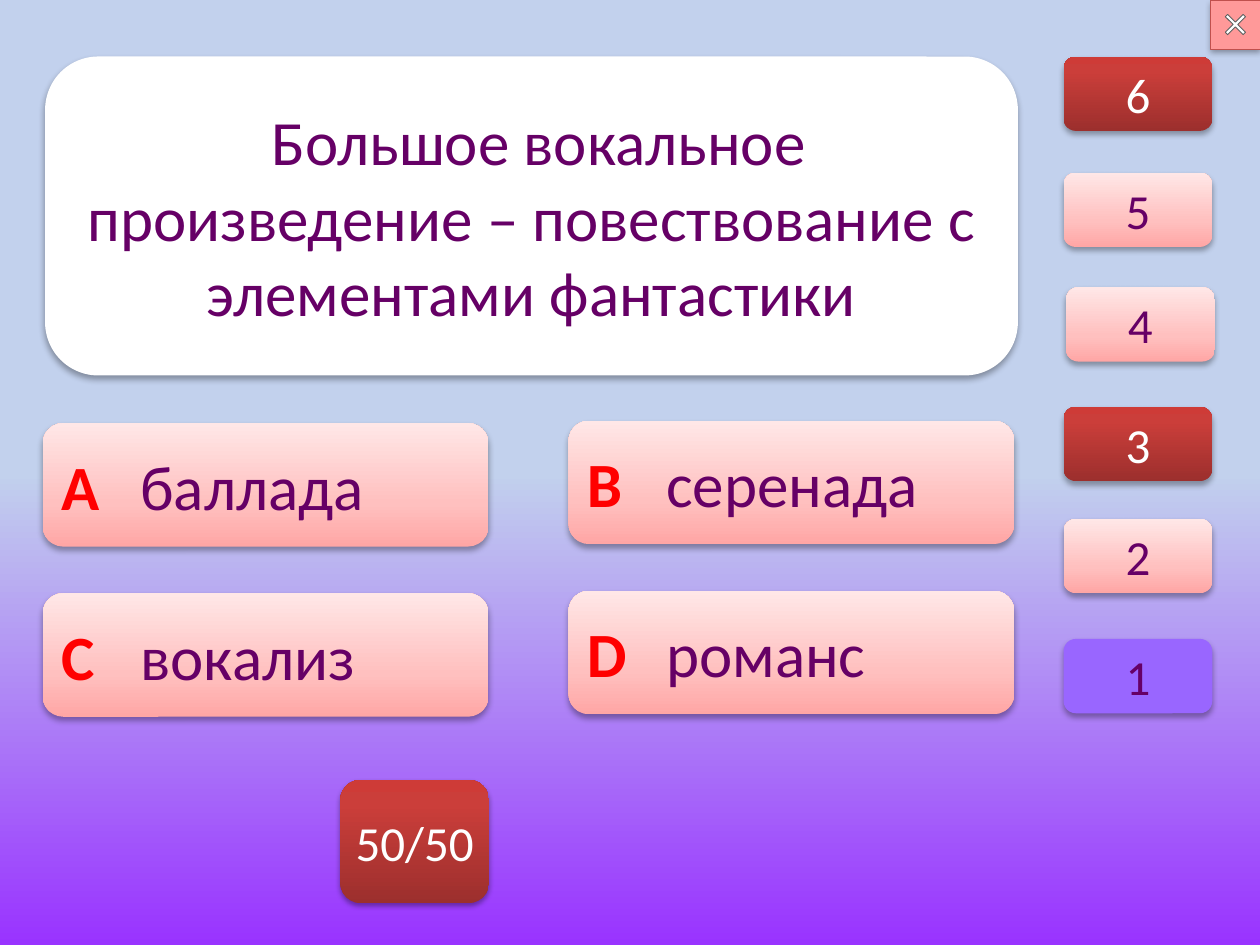
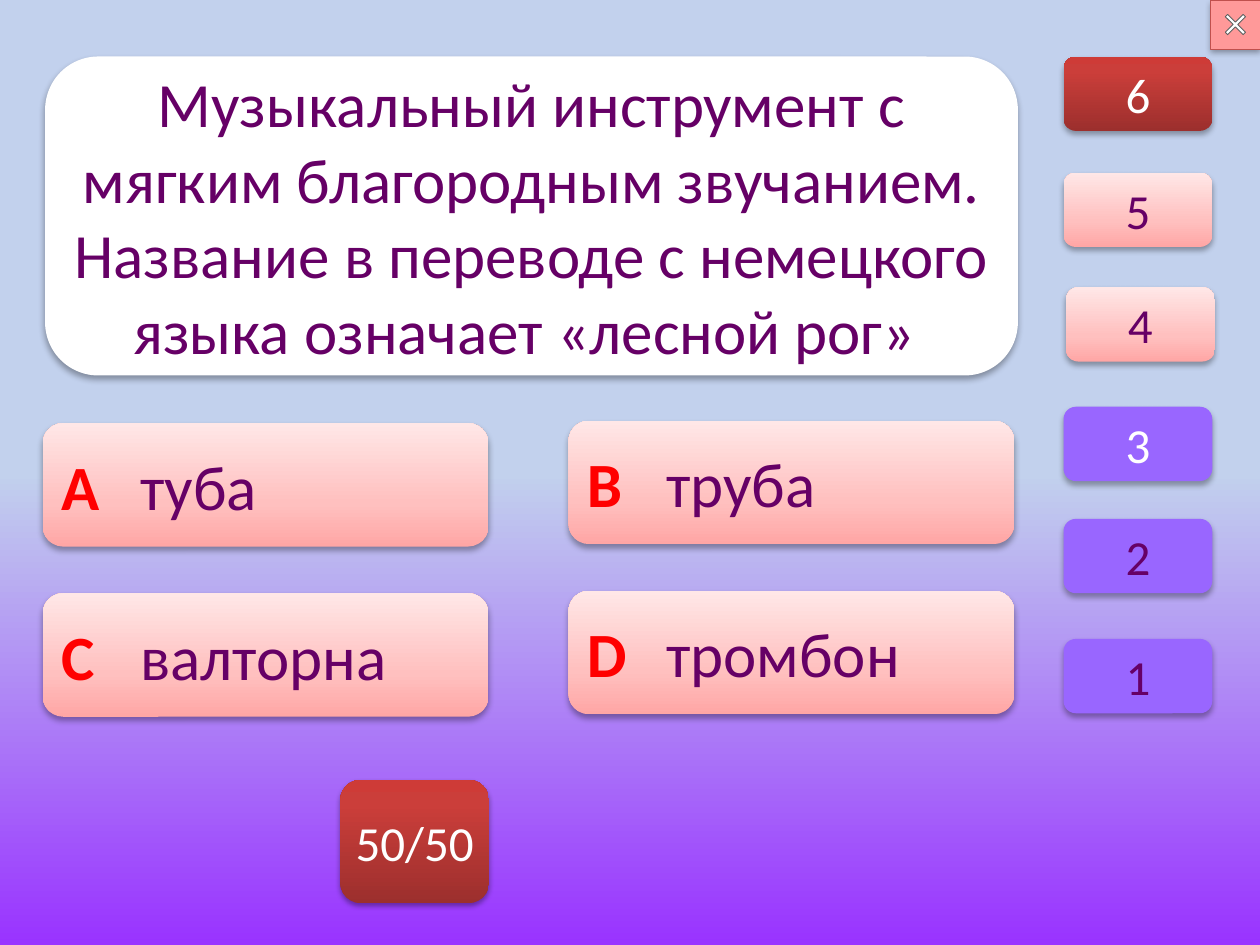
import pptx
import pptx.util
import pptx.dml.color
import pptx.enum.shapes
import pptx.enum.text
from lxml import etree
from pptx.oxml.ns import qn

Cm, Pt = pptx.util.Cm, pptx.util.Pt
SHAPE = pptx.enum.shapes.MSO_SHAPE
ALIGN = pptx.enum.text.PP_ALIGN

QUESTIONS = [
    {"question": " Большое вокальное произведение – повествование с элементами фантастики",
     "answers": ["баллада", "серенада", "вокализ", "романс"],
     "passed": 1},
    {"question": "Музыкальный инструмент с мягким благородным звучанием. "
                 "Название в переводе с немецкого языка означает «лесной рог» ",
     "answers": ["туба", "труба", "валторна", "тромбон"],
     "passed": 3},
]
LETTERS = ["А", "В", "C", "D"]
MILESTONES = (3, 6)

FONT = "Calibri"
COLORS = {
    "text": "660066", "letter": "FF0000", "white": "FFFFFF", "passed": "9966FF",
    "close": "FF9999", "close_edge": "C0504D", "cross_edge": "5F5F5F", "shadow": "000000",
}
# Gradients run from bottom to top: (percent, colour)
GRADIENTS = {
    "background": [(0, "9933FF"), (50, "C2D1ED"), (100, "C2D1ED")],
    "pink": [(0, "FFA6A5"), (35, "FFC0BF"), (100, "FFE7E7")],
    "red": [(0, "9C2F2D"), (80, "CB3E3A"), (100, "CE3B37")],
}
SOFT = (32, 3.5, 2.2)    # shadow: opacity in percent, blur and distance in points
TIGHT = (35, 3.1, 1.8)

CARD = (0.91, 1.14, 19.61, 6.43)
ANSWER_W, ANSWER_H = 8.99, 2.49
ANSWER_LEFTS = (0.86, 11.46)
ANSWER_TOPS = (8.53, 11.96)
RIGHT_COLUMN_LIFT = 0.05
ANSWER_TAB = 1.6
LEVEL_W, LEVEL_H = 3.0, 1.5
LEVELS = {6: (21.44, 1.14), 5: (21.44, 3.48), 4: (21.49, 5.79),
          3: (21.44, 8.2), 2: (21.44, 10.46), 1: (21.44, 12.88)}
HINT = (6.86, 15.72, LEVEL_W, ANSWER_H)
CLOSE = (24.41, 0, 0.99, 0.99)
CROSS = (24.65, 0.24, 0.51, 0.51)


def rgb(name):
    return pptx.dml.color.RGBColor.from_string(COLORS[name])


def fill_gradient(fill, owner, name):
    """Fill with a named gradient; owner is the element that holds the fill."""
    fill.gradient()
    fill.gradient_angle = 90
    stops = next(owner.iter(qn("a:gsLst")))
    for gs in list(stops):
        stops.remove(gs)
    for percent, color in GRADIENTS[name]:
        gs = etree.SubElement(stops, qn("a:gs"), pos=str(percent * 1000))
        etree.SubElement(gs, qn("a:srgbClr"), val=color)


def add_shadow(sp, opacity, blur, distance):
    effects = next(sp.element.iter(qn("a:effectLst")))
    shadow = etree.SubElement(effects, qn("a:outerShdw"), blurRad=str(Pt(blur)),
                              dist=str(Pt(distance)), dir="5400000", rotWithShape="0")
    color = etree.SubElement(shadow, qn("a:srgbClr"), val=COLORS["shadow"])
    etree.SubElement(color, qn("a:alpha"), val=str(opacity * 1000))


def add_box(s, kind, box, fill=None, line=None, shadow=None):
    sp = s.shapes.add_shape(kind, *(Cm(v) for v in box))
    sp.shadow.inherit = False
    if fill in GRADIENTS:
        fill_gradient(sp.fill, sp.element, fill)
    elif fill:
        sp.fill.solid()
        sp.fill.fore_color.rgb = rgb(fill)
    else:
        sp.fill.background()
    if line:
        sp.line.color.rgb = rgb(line)
        sp.line.width = Pt(0.5)
    else:
        sp.line.fill.background()
    if shadow:
        add_shadow(sp, *shadow)
    return sp


def style_run(r, size, color, bold=False):
    r.font.name = FONT
    r.font.size = Pt(size)
    r.font.bold = bold
    r.font.color.rgb = rgb(color)


def add_label(s, box, fill, text, size, color="text", wrap=False, shadow=SOFT):
    """Rounded box with centred text."""
    tf = add_box(s, SHAPE.ROUNDED_RECTANGLE, box, fill, shadow=shadow).text_frame
    tf.word_wrap = wrap
    p = tf.paragraphs[0]
    p.text = text
    p.alignment = ALIGN.CENTER
    style_run(p.runs[0], size, color)


def add_answer(s, box, letter, answer):
    tf = add_box(s, SHAPE.ROUNDED_RECTANGLE, box, "pink", shadow=SOFT).text_frame
    tf.word_wrap = True
    p = tf.paragraphs[0]
    p.alignment = ALIGN.LEFT
    tabs = etree.SubElement(p._p.get_or_add_pPr(), qn("a:tabLst"))
    etree.SubElement(tabs, qn("a:tab"), pos=str(Cm(ANSWER_TAB)), algn="l")
    for text, color, bold in ((letter + "\t", "letter", True), (answer, "text", False)):
        r = p.add_run()
        r.text = text
        style_run(r, 36, color, bold)


def add_close_button(s):
    add_box(s, SHAPE.ACTION_BUTTON_CUSTOM, CLOSE, "close", shadow=SOFT)
    cross = add_box(s, SHAPE.CROSS, CROSS, "white", "cross_edge")
    cross.adjustments[0] = 0.435
    cross.rotation = 45
    add_box(s, SHAPE.ACTION_BUTTON_CUSTOM, CLOSE, line="close_edge")


def add_levels(s, passed):
    for level, position in LEVELS.items():
        milestone = level in MILESTONES
        fill = "passed" if level <= passed else "red" if milestone else "pink"
        add_label(s, (*position, LEVEL_W, LEVEL_H), fill, str(level), 28,
                  "white" if milestone else "text")


def add_question_slide(prs, question, answers, passed):
    s = prs.slides.add_slide(prs.slide_layouts[6])
    add_close_button(s)
    add_label(s, CARD, "white", question, 36, wrap=True)
    for i, (letter, answer) in enumerate(zip(LETTERS, answers)):
        row, col = divmod(i, 2)
        top = ANSWER_TOPS[row] - col * RIGHT_COLUMN_LIFT
        add_answer(s, (ANSWER_LEFTS[col], top, ANSWER_W, ANSWER_H), letter, answer)
    add_label(s, HINT, "red", "50/50", 28, "white", shadow=TIGHT)
    add_levels(s, passed)


def main():
    prs = pptx.Presentation()
    prs.slide_width, prs.slide_height = Cm(25.4), Cm(19.05)
    master = prs.slide_master
    fill_gradient(master.background.fill, master.element, "background")
    for item in QUESTIONS:
        add_question_slide(prs, **item)
    prs.save("out.pptx")


if __name__ == "__main__":
    main()
